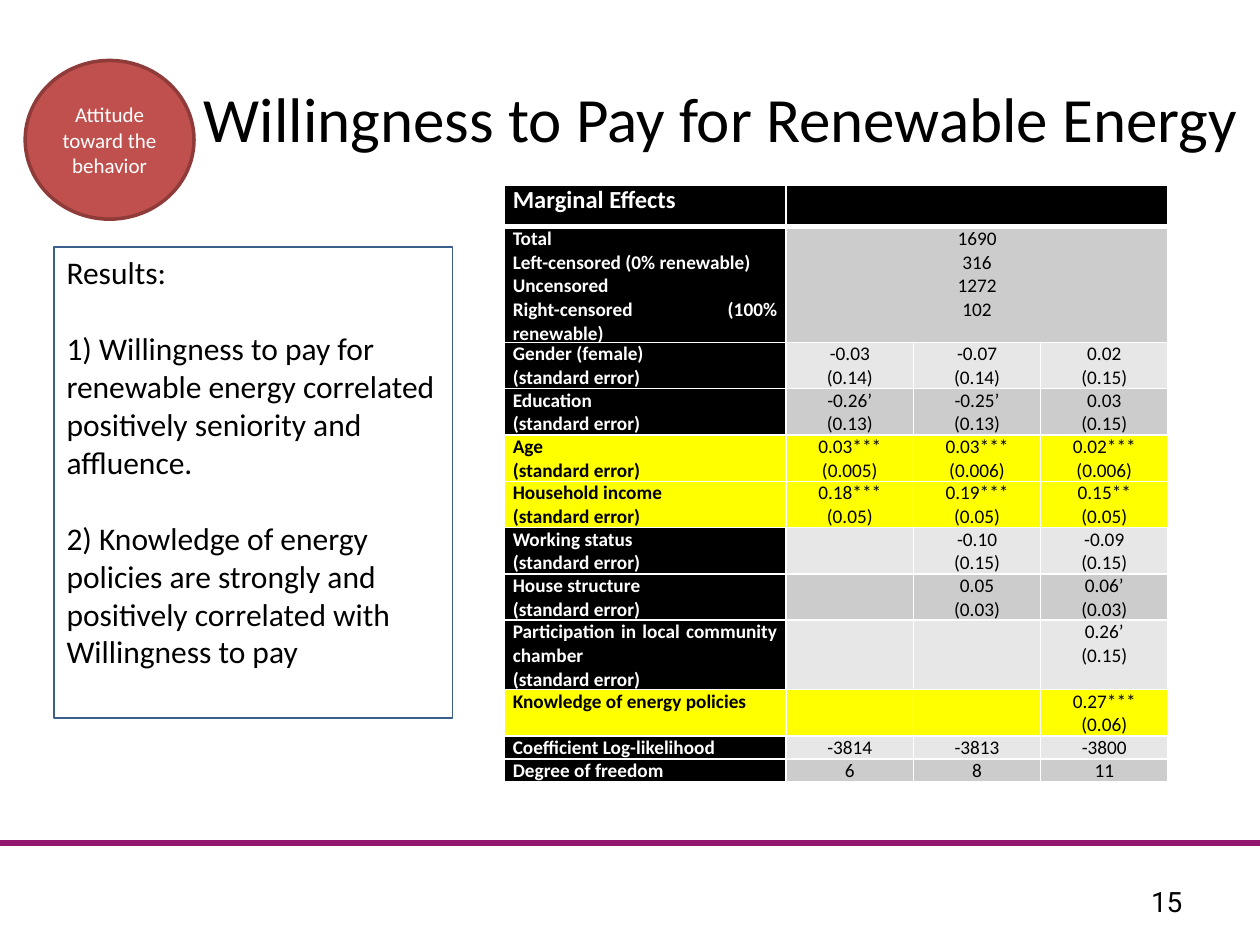
from lxml.etree import SubElement
from pptx import Presentation
from pptx.dml.color import RGBColor
from pptx.enum.shapes import MSO_CONNECTOR, MSO_SHAPE
from pptx.enum.text import MSO_ANCHOR as ANCHOR, PP_ALIGN as ALIGN
from pptx.oxml.ns import qn
from pptx.util import Inches, Pt


def rgb(value):
    return RGBColor.from_string(value)


def write(frame, text, size=11, color="000000", bold=False, font="Calibri",
          align=ALIGN.LEFT, anchor=ANCHOR.TOP, gap=0):
    frame.word_wrap = True
    frame.vertical_anchor = anchor
    for index, line in enumerate(text.split("\n")):
        paragraph = frame.add_paragraph() if index else frame.paragraphs[0]
        paragraph.alignment = align
        paragraph.space_before = Pt(gap if index else 0)
        paragraph.font.size = Pt(size)
        if line:
            run = paragraph.add_run()
            run.text = line
            run.font.size = Pt(size)
            run.font.name = font
            run.font.bold = bold
            run.font.color.rgb = rgb(color)


prs = Presentation()
prs.slide_width, prs.slide_height = Inches(10), Inches(7.5)
slide = prs.slides.add_slide(prs.slide_layouts[5])
shapes = slide.shapes

footer_rule = shapes.add_connector(
    MSO_CONNECTOR.STRAIGHT, Inches(0), Inches(6.69), Inches(10), Inches(6.69))
footer_rule.line.color.rgb = rgb("93166F")
footer_rule.line.width = Pt(3)
SubElement(footer_rule._element.spPr, qn("a:effectLst"))

page_number = shapes.add_textbox(Inches(9.02), Inches(6.95), Inches(0.48), Inches(0.4))
write(page_number.text_frame, "15", size=16, font="Roboto",
      align=ALIGN.CENTER, anchor=ANCHOR.MIDDLE)

SE = "\n(standard error)"
BLACK, YELLOW, DARK, LIGHT = "000000", "FFFF00", "CCCCCC", "E7E7E7"
effects = [
    (0.33, BLACK, "Marginal Effects", [""]),
    (0.66, DARK, "Total\nLeft-censored (0% renewable)\nUncensored\nRight-censored (100% renewable)",
     ["1690\n316\n1272\n102"]),
    (0.33, LIGHT, "Gender (female)" + SE, ["-0.03\n(0.14)", "-0.07\n(0.14)", "0.02\n(0.15)"]),
    (0.33, DARK, "Education" + SE, ["-0.26’\n(0.13)", "-0.25’\n(0.13)", "0.03\n(0.15)"]),
    (0.33, YELLOW, "Age" + SE, ["0.03***\n(0.005)", "0.03***\n(0.006)", "0.02***\n(0.006)"]),
    (0.33, YELLOW, "Household income" + SE,
     ["0.18***\n(0.05)", "0.19***\n(0.05)", "0.15**\n(0.05)"]),
    (0.33, LIGHT, "Working status" + SE, ["", "-0.10\n(0.15)", "-0.09\n(0.15)"]),
    (0.33, DARK, "House structure" + SE, ["", "0.05\n(0.03)", "0.06’\n(0.03)"]),
    (0.49, LIGHT, "Participation in local community chamber" + SE, ["", "", "0.26’\n(0.15)"]),
    (0.33, YELLOW, "Knowledge of energy policies", ["", "", "0.27***\n(0.06)"]),
    (0.16, LIGHT, "Coefficient Log-likelihood", ["-3814", "-3813", "-3800"]),
    (0.16, DARK, "Degree of freedom", ["6", "8", "11"]),
]
table = shapes.add_table(len(effects), 4, Inches(4), Inches(1.47),
                         Inches(5.28), Inches(4.1)).table
for column, width in zip(table.columns, (2.24, 1.01, 1.01, 1.01)):
    column.width = Inches(width)

for r, (height, shade, label, values) in enumerate(effects):
    table.rows[r].height = Inches(height)
    if len(values) == 1:
        table.cell(r, 1).merge(table.cell(r, 3))
    texts = [label] + values + [""] * (3 - len(values))
    for c, text in enumerate(texts):
        cell = table.cell(r, c)
        cell.margin_left = cell.margin_right = Inches(0.07)
        cell.margin_top = cell.margin_bottom = 0
        fill = BLACK if c == 0 and shade != YELLOW else shade
        write(cell.text_frame, text, size=11 if r else 14, bold=c == 0,
              color="FFFFFF" if fill == BLACK else "000000",
              align=ALIGN.CENTER if c else ALIGN.JUSTIFY)
        properties = cell._tc.get_or_add_tcPr()
        for side in ("lnL", "lnR", "lnT", "lnB"):
            thick = (r, side) in ((0, "lnB"), (1, "lnT"))
            border = SubElement(properties, qn("a:" + side), w=str(Pt(3 if thick else 1)))
            SubElement(SubElement(border, qn("a:solidFill")), qn("a:srgbClr"), val="FFFFFF")
        cell.fill.solid()
        cell.fill.fore_color.rgb = rgb(fill)

title = shapes.title
title.left, title.top = Inches(1.46), Inches(0.58)
title.width, title.height = Inches(8.52), Inches(1.25)
write(title.text_frame, "Willingness to Pay for Renewable Energy", size=36, align=ALIGN.CENTER)

results = shapes.add_shape(
    MSO_SHAPE.RECTANGLE, Inches(0.43), Inches(1.96), Inches(3.16), Inches(3.74))
results.shadow.inherit = False
results.fill.background()
results.line.color.rgb = rgb("3A5F8C")
results.line.width = Pt(0.75)
write(results.text_frame,
      "Results:\n"
      "1) Willingness to pay for renewable energy correlated positively seniority and affluence.\n"
      "2) Knowledge of energy policies are strongly and positively correlated with "
      "Willingness to pay",
      size=18, gap=22)

attitude = shapes.add_shape(
    MSO_SHAPE.OVAL, Inches(0.2), Inches(0.48), Inches(1.34), Inches(1.26))
attitude.shadow.inherit = False
attitude.fill.solid()
attitude.fill.fore_color.rgb = rgb("C0504D")
attitude.line.color.rgb = rgb("8E3B39")
attitude.line.width = Pt(2)
write(attitude.text_frame, "Attitude toward the behavior", size=12, color="FFFFFF",
      align=ALIGN.CENTER, anchor=ANCHOR.MIDDLE)

prs.save("out.pptx")
